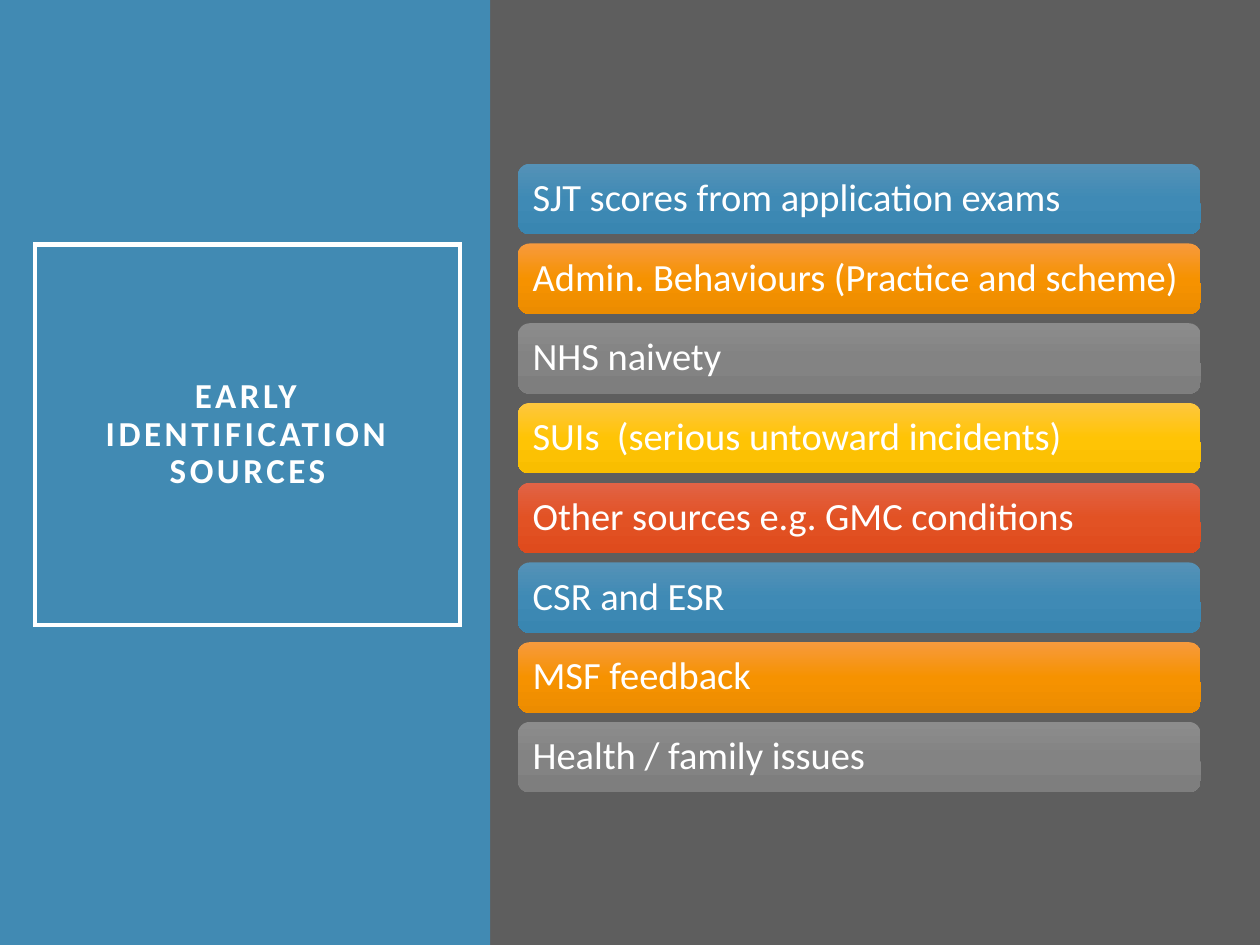
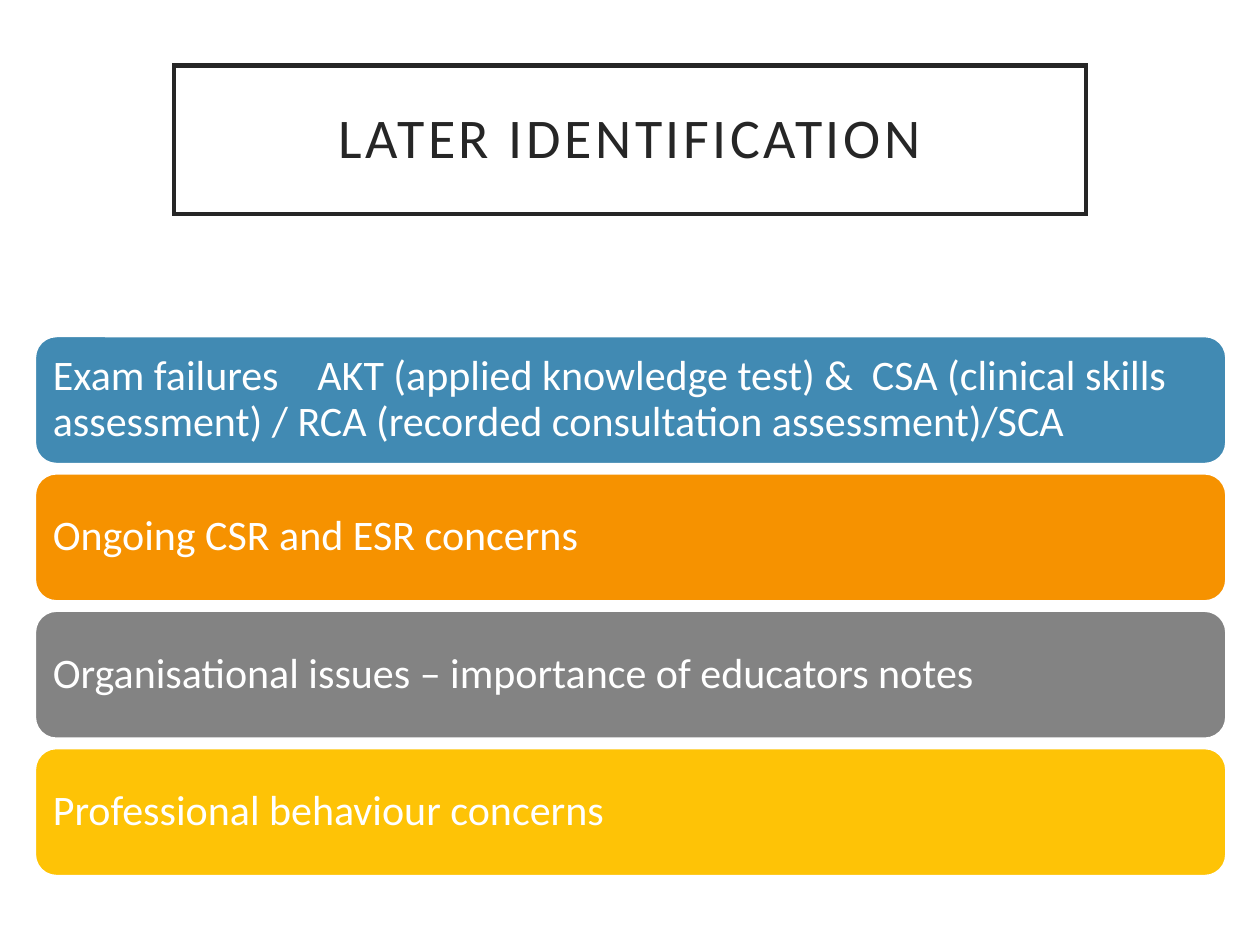
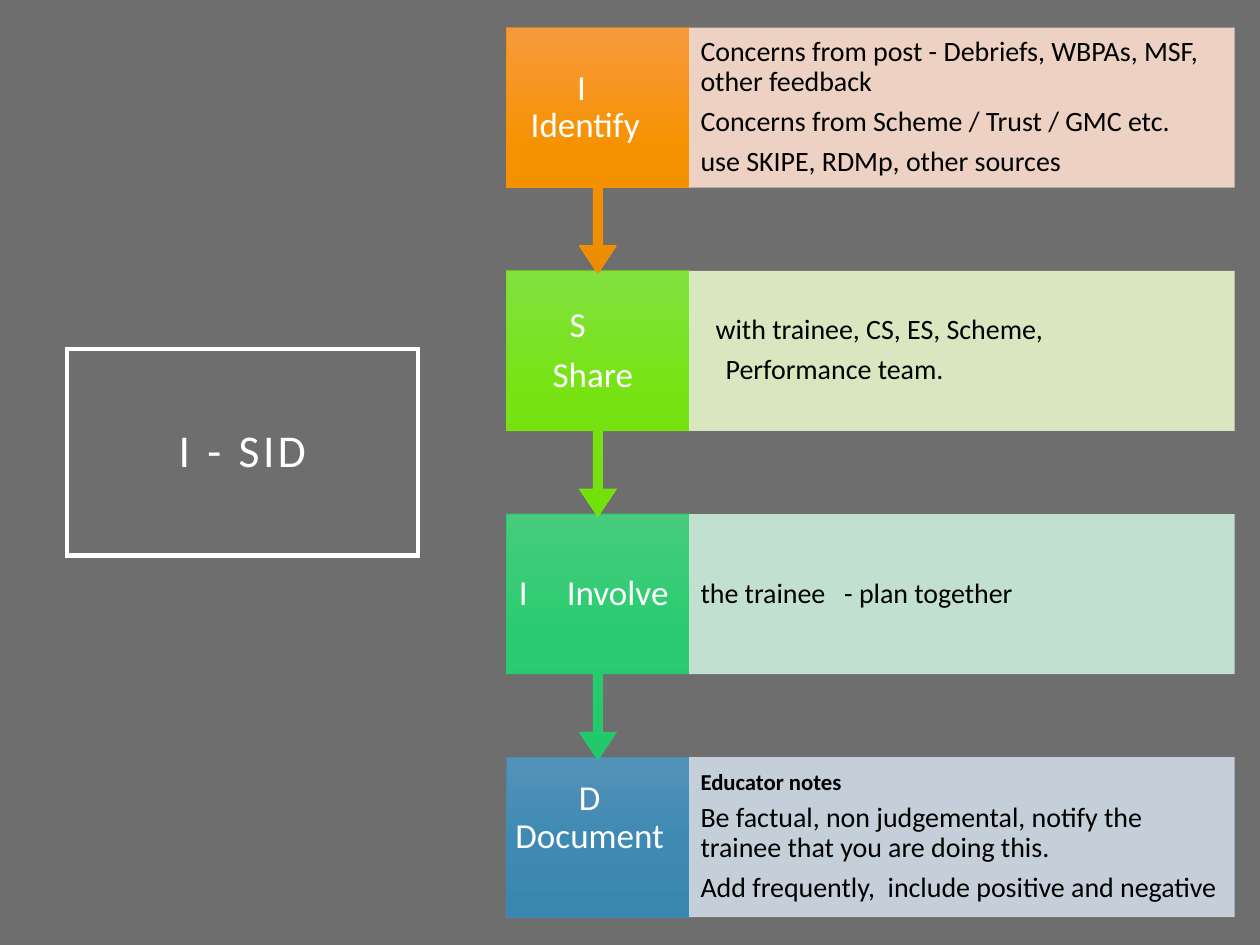
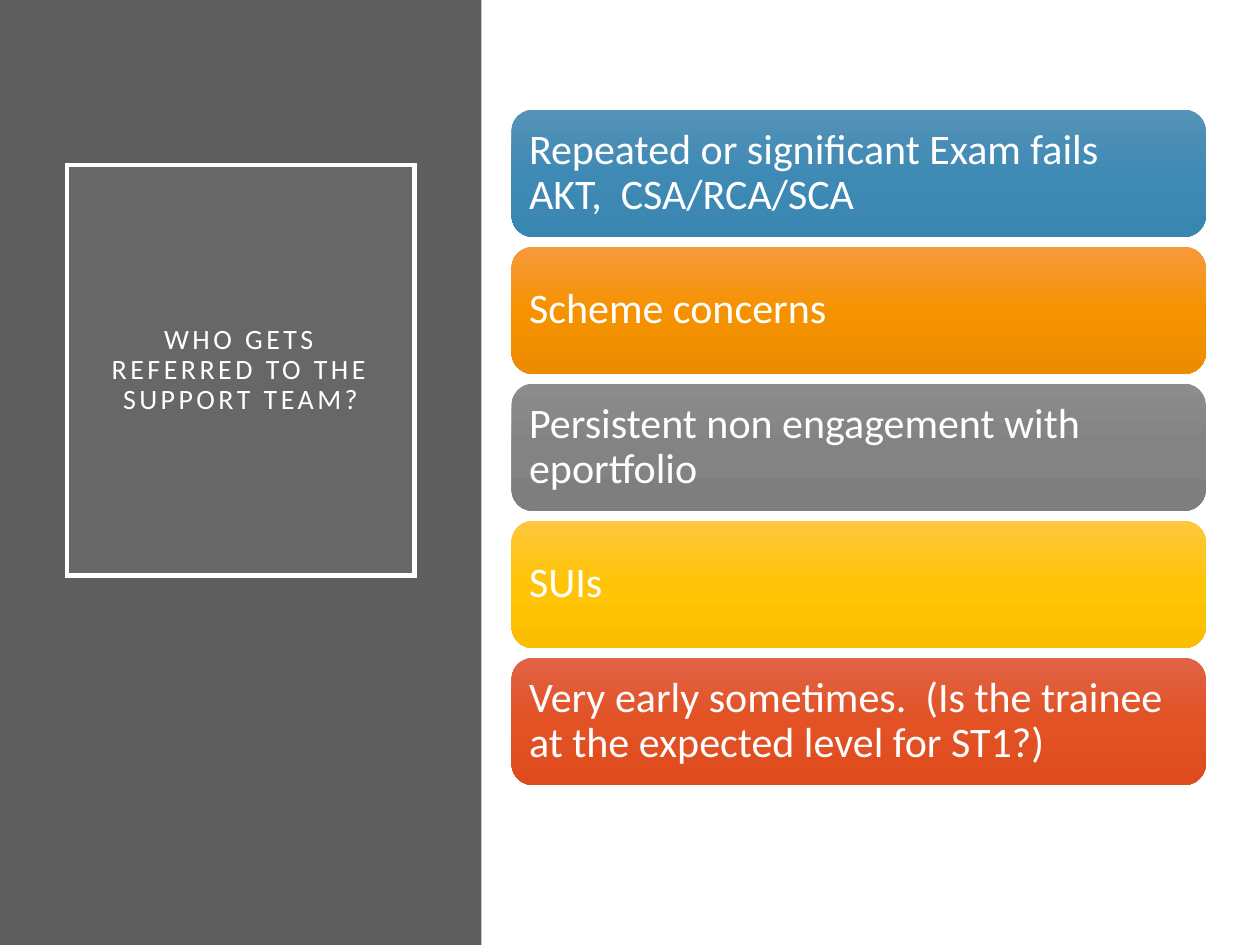
"""Build four slides on identifying and supporting trainees in difficulty."""
from lxml import etree
from pptx import Presentation
from pptx.dml import color
from pptx.enum import shapes, text
from pptx.oxml import ns
from pptx.util import Inches, Pt

FONT = "Calibri"
WHITE, BLACK, INK, CHARCOAL, GREY, BLUE = "FFFFFF", "000000", "262626", "5E5E5E", "6E6E6E", "418AB3"
BLUE_FADE = ("5592B7", "3F8AB5", "3986B1")
ORANGE_FADE = ("F79A3D", "F69200", "EC8C00")
BAR_FADES = [
    BLUE_FADE,
    ORANGE_FADE,
    ("8C8C8C", "838383", "7E7E7E"),
    ("FEC73E", "FFC405", "F9BE00"),
    ("E16346", "E25224", "DF4B1D"),
]
BAR_SOLIDS = [BLUE, "F69200", "838383", "FEC306"]

BAR_SLIDES = [
    {
        "background": CHARCOAL,
        "panel": (3.89, BLUE),
        "title": {"words": "EARLY IDENTIFICATION SOURCES", "at": (0.28, 1.94, 3.37, 3.02),
                  "size": 20, "bold": True},
        "bars": [
            "SJT scores from application exams",
            "Admin. Behaviours (Practice and scheme)",
            "NHS naivety",
            "SUIs  (serious untoward incidents)",
            "Other sources e.g. GMC conditions",
            "CSR and ESR",
            "MSF feedback",
            "Health / family issues",
        ],
        "first": (4.11, 1.3, 5.42, 0.56), "last_top": 5.73, "size": 22,
        "fills": BAR_FADES,
    },
    {
        "background": WHITE,
        "title": {"words": "LATER IDENTIFICATION", "at": (1.38, 0.52, 7.24, 1.18),
                  "size": 32, "ink": INK, "fill": WHITE},
        "bars": [
            "Exam failures\tAKT (applied knowledge test) &  CSA (clinical skills assessment)"
            " / RCA (recorded consultation assessment)/SCA",
            "Ongoing CSR and ESR concerns",
            "Organisational issues – importance of educators notes",
            "Professional behaviour concerns",
        ],
        "first": (0.28, 2.67, 9.45, 1.01), "last_top": 5.94, "size": 24,
        "fills": BAR_SOLIDS, "outline": WHITE, "tab": 2.1,
    },
    {
        "background": WHITE,
        "panel": (3.82, CHARCOAL),
        "title": {"words": "WHO GETS REFERRED TO THE SUPPORT TEAM?", "at": (0.53, 1.31, 2.76, 3.26),
                  "size": 16, "fill": "9E9E9E", "opacity": 15},
        "bars": [
            "Repeated or significant Exam fails\vAKT,  CSA/RCA/SCA",
            "Scheme concerns",
            "Persistent non engagement with eportfolio",
            "SUIs",
            "Very early sometimes.  (Is the trainee at the expected level for ST1?)",
        ],
        "first": (4.06, 0.87, 5.51, 1.01), "last_top": 5.22, "size": 24,
        "fills": BAR_FADES,
    },
]

ISID_TITLE = {"words": "I - SID", "at": (0.53, 2.77, 2.79, 1.64), "size": 26}
ISID_STEPS = [
    {
        "label": [("I", {"right": 0.26, "after": 0}), ("Identify", {"right": 0.2})],
        "fade": ORANGE_FADE, "edge": "F69200", "tint": "FBDCCC",
        "detail": [
            ("Concerns from post - Debriefs, WBPAs, MSF, other feedback", {}),
            ("Concerns from Scheme / Trust / GMC etc.", {}),
            ("use SKIPE, RDMp, other sources", {}),
        ],
    },
    {
        "label": [("S", {"right": 0.32}), ("Share", {"right": 0.08})],
        "fade": ("82E13F", "77E313", "72E00B"), "edge": "78E016", "tint": "E5F5CB",
        "detail": [
            ("with trainee, CS, ES, Scheme,", {"left": 0.12}),
            ("Performance team.", {"left": 0.2}),
        ],
    },
    {
        "label": [("I\tInvolve", {"tab": 0.38, "align": "LEFT"})], "inset": 0.1,
        "fade": ("47CC7B", "29CC70", "22C96B"), "edge": "2BC970", "tint": "CCEDDB",
        "detail": [("the trainee\t- plan together", {"tab": 1.14})],
    },
    {
        "label": [("D", {"right": 0.13, "after": 0}), ("Document", {})],
        "fade": BLUE_FADE, "edge": BLUE, "tint": "CFDAE5", "lift": 0.3,
        "detail": [
            ("Educator notes", {"size": 13, "bold": True}),
            ("Be factual, non judgemental, notify the trainee that you are doing this.", {}),
            ("Add frequently,  include positive and negative", {}),
        ],
    },
]
STEP_LEFT, STEP_TOP, STEP_PITCH = 4.02, 0.22, 1.93
LABEL_WIDTH, DETAIL_WIDTH, STEP_HEIGHT, CALLOUT_HEIGHT = 1.45, 4.33, 1.27, 1.95
CALLOUT_ADJUSTMENTS = (0.05, 0.1, 0.15, 0.65)


def rgb(code):
    return color.RGBColor.from_string(code)


def add_element(parent, tag, **attributes):
    return etree.SubElement(parent, ns.qn(tag), **attributes)


def fade_fill(shape, fade):
    shape.fill.gradient()
    shape.fill.gradient_angle = 270
    stops = shape._element.spPr.find(".//" + ns.qn("a:gsLst"))
    for stop in list(stops):
        stops.remove(stop)
    for position, code in zip((0, 50000, 100000), fade):
        add_element(add_element(stops, "a:gs", pos=str(position)), "a:srgbClr", val=code)


def add_box(slide, at, fill=None, outline=None, width=1, kind="RECTANGLE", opacity=100):
    box = slide.shapes.add_shape(shapes.MSO_SHAPE[kind], *map(Inches, at))
    box.shadow.inherit = False
    if fill is None:
        box.fill.background()
    elif isinstance(fill, tuple):
        fade_fill(box, fill)
    else:
        box.fill.solid()
        box.fill.fore_color.rgb = rgb(fill)
    if outline:
        box.line.color.rgb = rgb(outline)
        box.line.width = Pt(width)
        add_element(box._element.spPr.find(ns.qn("a:ln")), "a:miter", lim="800000")
    else:
        box.line.fill.background()
    if opacity < 100:
        solid = box._element.spPr.find(ns.qn("a:solidFill"))
        add_element(solid[0], "a:alpha", val=str(opacity * 1000))
    return box


def write(box, lines, size, ink=WHITE, align="LEFT", inset=(0.1, 0.1), lift=0, tracking=0):
    frame = box.text_frame
    frame.word_wrap = True
    frame.vertical_anchor = text.MSO_ANCHOR.MIDDLE
    frame.margin_left = frame.margin_right = Inches(inset[0])
    frame.margin_top, frame.margin_bottom = Inches(inset[1]), Inches(inset[1] + lift)
    for number, (words, style) in enumerate(lines):
        paragraph = frame.add_paragraph() if number else frame.paragraphs[0]
        paragraph.text = words
        paragraph.alignment = text.PP_ALIGN[style.get("align", align)]
        paragraph.line_spacing = 0.9
        line_size = style.get("size", size)
        paragraph.space_after = Pt(style.get("after", 0.35 * line_size))
        properties = paragraph._p.get_or_add_pPr()
        for side, attribute in (("left", "marL"), ("right", "marR")):
            if side in style:
                properties.set(attribute, str(Inches(style[side])))
        if style.get("tab"):
            stops = add_element(properties, "a:tabLst")
            add_element(stops, "a:tab", pos=str(Inches(style["tab"])), algn="l")
        font = paragraph.font
        font.name, font.size, font.bold = FONT, Pt(line_size), style.get("bold", False)
        font.color.rgb = rgb(ink)
        if tracking:
            properties.find(ns.qn("a:defRPr")).set("spc", str(tracking * 100))


def add_slide(deck, background):
    slide = deck.slides.add_slide(deck.slide_layouts[6])
    slide.background.fill.solid()
    slide.background.fill.fore_color.rgb = rgb(background)
    return slide


def add_title(slide, title):
    ink = title.get("ink", WHITE)
    box = add_box(slide, title["at"], title.get("fill"), ink, 2.5, opacity=title.get("opacity", 100))
    style = {"bold": title.get("bold", False), "after": 0}
    write(box, [(title["words"], style)], title["size"], ink, "CENTER", (0.2, 0.2), tracking=2)


def build_bar_slide(deck, content):
    slide = add_slide(deck, content["background"])
    if "panel" in content:
        width, fill = content["panel"]
        add_box(slide, (0, 0, width, 7.5), fill)
    add_title(slide, content["title"])
    left, top, width, height = content["first"]
    pitch = (content["last_top"] - top) / (len(content["bars"]) - 1)
    fills = content["fills"]
    for row, words in enumerate(content["bars"]):
        at = (left, top + row * pitch, width, height)
        bar = add_box(slide, at, fills[row % len(fills)], content.get("outline"),
                      kind="ROUNDED_RECTANGLE")
        style = {"after": 0, "tab": content.get("tab") if "\t" in words else None}
        write(bar, [(words, style)], content["size"], inset=(0.09, 0.1))


def build_isid_slide(deck):
    slide = add_slide(deck, GREY)
    add_title(slide, ISID_TITLE)
    last = len(ISID_STEPS) - 1
    for row in range(last, -1, -1):
        step = ISID_STEPS[row]
        top = STEP_TOP + row * STEP_PITCH
        kind, height = ("RECTANGLE", STEP_HEIGHT) if row == last else ("DOWN_ARROW_CALLOUT", CALLOUT_HEIGHT)
        label = add_box(slide, (STEP_LEFT, top, LABEL_WIDTH, height), step["fade"], step["edge"], 0.5, kind)
        if row < last:
            for index, value in enumerate(CALLOUT_ADJUSTMENTS):
                label.adjustments[index] = value
        write(label, step["label"], 20, align="CENTER", inset=(step.get("inset", 0.04), 0.16),
              lift=step.get("lift", 0))
        detail_at = (STEP_LEFT + LABEL_WIDTH, top, DETAIL_WIDTH, STEP_HEIGHT)
        detail = add_box(slide, detail_at, step["tint"], opacity=90)
        write(detail, step["detail"], 16, BLACK, inset=(0.09, 0.1))


def main():
    deck = Presentation()
    deck.slide_width, deck.slide_height = Inches(10), Inches(7.5)
    early, later, referral = BAR_SLIDES
    build_bar_slide(deck, early)
    build_bar_slide(deck, later)
    build_isid_slide(deck)
    build_bar_slide(deck, referral)
    deck.save("out.pptx")


if __name__ == "__main__":
    main()
